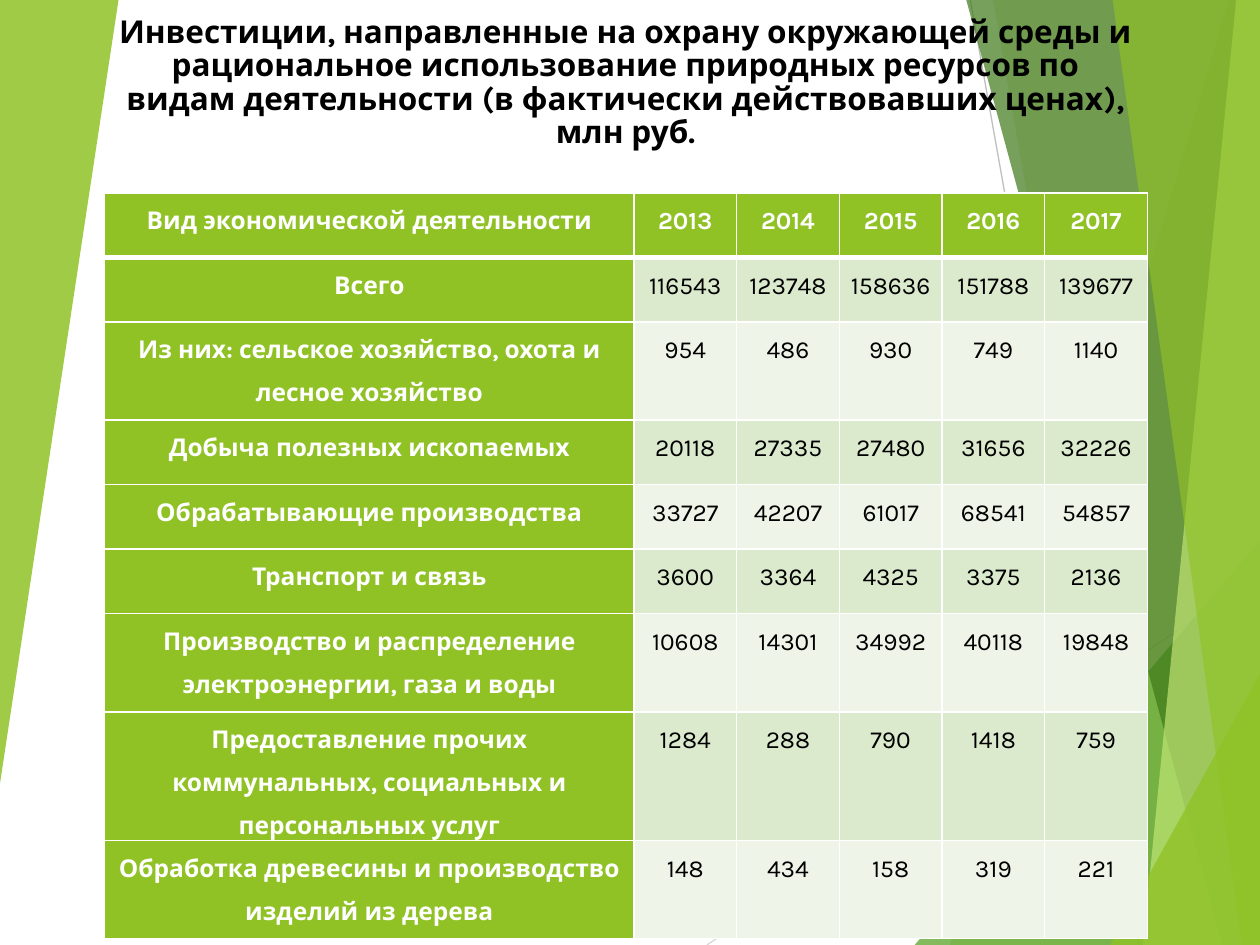
from lxml.etree import SubElement
from pptx import Presentation
from pptx.dml.color import RGBColor
from pptx.enum.shapes import MSO_CONNECTOR
from pptx.enum.text import MSO_ANCHOR, MSO_AUTO_SIZE, PP_ALIGN
from pptx.oxml.ns import qn
from pptx.util import Cm, Pt

FONT = "Karla"
WHITE = RGBColor(0xFF, 0xFF, 0xFF)
BLACK = RGBColor(0x00, 0x00, 0x00)
GREEN = RGBColor(0x90, 0xC2, 0x26)
LEAF = RGBColor(0x54, 0xA0, 0x21)
FOREST = RGBColor(0x3F, 0x78, 0x19)
LIME = RGBColor(0xC0, 0xE4, 0x74)
BANDS = (RGBColor(0xEE, 0xF4, 0xE8), RGBColor(0xDB, 0xE9, 0xCD))
SILVER = RGBColor(0xD9, 0xD9, 0xD9)
GREY = RGBColor(0xBF, 0xBF, 0xBF)

WIDE, HIGH = 25.4, 19.05
LEFT = 2.11
TITLE = ("Инвестиции, направленные на охрану окружающей среды и рациональное "
         "использование природных ресурсов по видам деятельности "
         "(в фактически действовавших ценах), млн руб.")

# start, end, colour; all lengths are in centimetres
RAYS = [
    ((14.25, HIGH), (WIDE, 11.6), SILVER),
    ((19.56, 0), (22.96, HIGH), GREY),
]
# corners, colour, opacity in percent
FACETS = [
    ([(24.77, 0), (19.15, HIGH), (WIDE, HIGH), (WIDE, 0)], GREEN, 30),
    ([(20.02, 0), (23.34, HIGH), (WIDE, HIGH), (WIDE, 0)], GREEN, 20),
    ([(18.44, HIGH), (WIDE, 10.9), (WIDE, HIGH)], LEAF, 72),
    ([(19.48, 0), (24.64, HIGH), (WIDE, HIGH), (WIDE, 0)], FOREST, 70),
    ([(24.92, 0), (23.04, HIGH), (WIDE, HIGH), (WIDE, 0)], LIME, 70),
    ([(22.43, 0), (25.04, HIGH), (WIDE, HIGH), (WIDE, 0)], GREEN, 65),
    ([(22.38, HIGH), (WIDE, 13.59), (WIDE, HIGH)], GREEN, 80),
    ([(0, 0), (2.39, 0), (0, 15.8)], GREEN, 85),
]

COLS = [10.67] + [2.07] * 5
LOW, TALL = 1.3, 1.98
# row height, then the cells
ROWS = [
    (LOW, "Вид экономической деятельности", 2013, 2014, 2015, 2016, 2017),
    (LOW, "Всего", 116543, 123748, 158636, 151788, 139677),
    (TALL, "Из них: сельское хозяйство, охота и лесное хозяйство",
     954, 486, 930, 749, 1140),
    (LOW, "Добыча полезных ископаемых", 20118, 27335, 27480, 31656, 32226),
    (LOW, "Обрабатывающие производства", 33727, 42207, 61017, 68541, 54857),
    (LOW, "Транспорт и связь", 3600, 3364, 4325, 3375, 2136),
    (TALL, "Производство и распределение электроэнергии, газа и воды",
     10608, 14301, 34992, 40118, 19848),
    (TALL, "Предоставление прочих коммунальных, социальных и персональных услуг",
     1284, 288, 790, 1418, 759),
    (TALL, "Обработка древесины и производство изделий из дерева",
     148, 434, 158, 319, 221),
]


def assign(item, values):
    for name, value in values.items():
        setattr(item, name, value)


def write(frame, text, size, color, bold, spacing):
    frame.text = text
    para = frame.paragraphs[0]
    assign(para, {"alignment": PP_ALIGN.CENTER, "line_spacing": spacing})
    font = para.runs[0].font
    assign(font, {"name": FONT, "size": Pt(size), "bold": bold})
    font.color.rgb = color


def add_ray(group, start, end, color):
    ray = group.shapes.add_connector(
        MSO_CONNECTOR.STRAIGHT, *map(Cm, start + end))
    ray.line.color.rgb = color
    ray.line.width = Pt(0.75)
    SubElement(ray._element.spPr, qn("a:effectLst"))


def add_facet(group, points, color, alpha):
    first, *rest = [(Cm(x), Cm(y)) for x, y in points]
    path = group.shapes.build_freeform(*first)
    path.add_line_segments(rest)
    facet = path.convert_to_shape()
    facet.shadow.inherit = False
    facet.line.fill.background()
    facet.fill.solid()
    facet.fill.fore_color.rgb = color
    tint = facet._element.spPr.find(".//" + qn("a:srgbClr"))
    SubElement(tint, qn("a:alpha"), val=str(alpha * 1000))


def add_backdrop(slide):
    group = slide.shapes.add_group_shape()
    for ray in RAYS:
        add_ray(group, *ray)
    for facet in FACETS:
        add_facet(group, *facet)


def set_title(slide):
    title = slide.shapes.title
    assign(title, {"left": Cm(LEFT), "top": Cm(0.74),
                   "width": Cm(21), "height": Cm(3.17)})
    frame = title.text_frame
    assign(frame, {"word_wrap": True, "auto_size": MSO_AUTO_SIZE.NONE,
                   "vertical_anchor": MSO_ANCHOR.BOTTOM,
                   "margin_bottom": Cm(0.88)})
    write(frame, TITLE, 18, BLACK, True, 0.88)
    # bring the title in front of the backdrop
    slide.shapes._spTree.append(title._element)


def set_edges(cell, widths):
    """Draw white borders; widths maps L, R, T and B to points."""
    props = cell._tc.get_or_add_tcPr()
    for side, width in widths.items():
        line = SubElement(props, qn("a:ln" + side), w=str(Pt(width)))
        fill = SubElement(line, qn("a:solidFill"))
        SubElement(fill, qn("a:srgbClr"), val=str(WHITE))


def fill_cell(cell, text, row, col):
    head = row == 0 or col == 0
    set_edges(cell, {"L": 1, "R": 1, "T": 3 if row == 1 else 1,
                     "B": 3 if row == 0 else 1})
    cell.fill.solid()
    cell.fill.fore_color.rgb = GREEN if head else BANDS[row % 2]
    assign(cell, {"margin_left": Cm(0.13), "margin_right": Cm(0.13),
                  "margin_top": 0, "margin_bottom": 0,
                  "vertical_anchor": MSO_ANCHOR.TOP})
    write(cell.text_frame, text, 14, WHITE if head else BLACK, head, 1.5)


def add_grid(slide):
    high = sum(row[0] for row in ROWS)
    table = slide.shapes.add_table(
        len(ROWS), len(COLS), Cm(LEFT), Cm(3.89),
        Cm(sum(COLS)), Cm(high)).table
    table.first_col = True
    for col, width in zip(table.columns, COLS):
        col.width = Cm(width)
    for r, (height, *texts) in enumerate(ROWS):
        table.rows[r].height = Cm(height)
        for c, text in enumerate(texts):
            fill_cell(table.cell(r, c), str(text), r, c)


def main():
    deck = Presentation()
    assign(deck, {"slide_width": Cm(WIDE), "slide_height": Cm(HIGH)})
    slide = deck.slides.add_slide(deck.slide_layouts[5])
    add_backdrop(slide)
    set_title(slide)
    add_grid(slide)
    deck.save("out.pptx")


if __name__ == "__main__":
    main()
